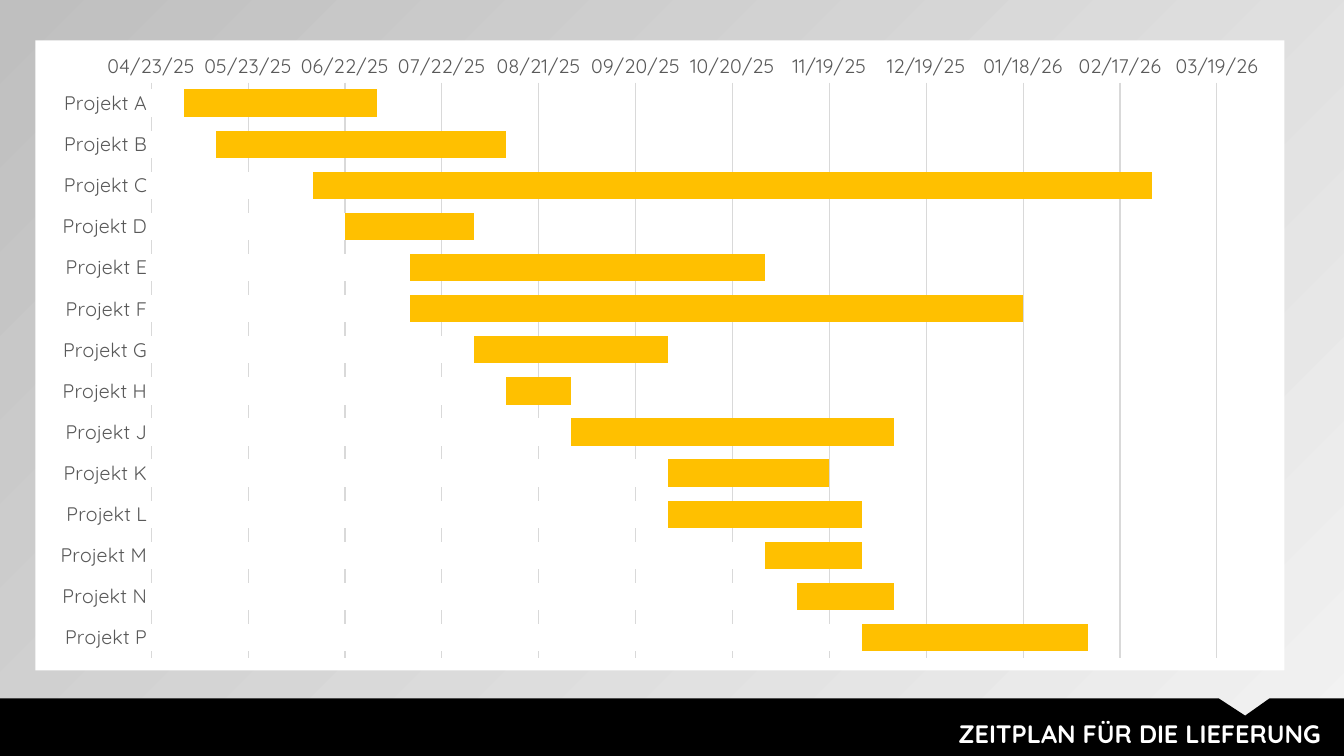
from lxml import etree
from pptx import Presentation
from pptx.chart.data import CategoryChartData
from pptx.dml.color import RGBColor
from pptx.enum.chart import XL_CHART_TYPE as ChartType, XL_TICK_MARK as TickMark
from pptx.enum.text import MSO_ANCHOR, PP_ALIGN
from pptx.oxml import parse_xml
from pptx.oxml.ns import nsdecls, qn
from pptx.util import Inches, Pt

FONT = "Quicksand"
BLACK = RGBColor(0, 0, 0)
WHITE = RGBColor(255, 255, 255)
AMBER = RGBColor(0xFF, 0xC0, 0x00)
LABEL_GREY = RGBColor(0x59, 0x59, 0x59)
LINE_GREY = RGBColor(0xD9, 0xD9, 0xD9)
BACK_LIGHT = RGBColor(0xF2, 0xF2, 0xF2)
BACK_DARK = RGBColor(0xBF, 0xBF, 0xBF)

# Project letter: first and last day as date serial numbers, to the nearest ten
SCHEDULE = {
    "A": (45780, 45840),
    "B": (45790, 45880),
    "C": (45820, 46080),
    "D": (45830, 45870),
    "E": (45850, 45960),
    "F": (45850, 46040),
    "G": (45870, 45930),
    "H": (45880, 45900),
    "J": (45900, 46000),
    "K": (45930, 45980),
    "L": (45930, 45990),
    "M": (45960, 45990),
    "N": (45970, 46000),
    "P": (45990, 46060),
}
AXIS_START, AXIS_END, AXIS_STEP = 45770, 46100, 30
DATE_FORMAT = "mm/dd/yy;@"


def style_font(font, size, color, bold=False):
    font.name = FONT
    font.size = Pt(size)
    font.bold = bold
    font.color.rgb = color


def paint_background(slide):
    fill = slide.background.fill
    fill.gradient()
    fill.gradient_angle = 135
    for stop, color in zip(fill.gradient_stops, (BACK_LIGHT, BACK_DARK)):
        stop.color.rgb = color


def add_footer(slide, left, top, width, height):
    # Black band with a notch in its upper edge
    right, bottom = left + width, top + height
    notch = [(1.24, 0), (0.98, 0.17), (0.74, 0)]
    points = [(right - Inches(x), top + Inches(y)) for x, y in notch]
    points += [(right, top), (right, bottom), (left, bottom)]
    builder = slide.shapes.build_freeform(left, top, scale=1.0)
    builder.add_line_segments(points, close=True)
    band = builder.convert_to_shape()
    band.shadow.inherit = False
    band.fill.solid()
    band.fill.fore_color.rgb = BLACK
    band.line.fill.background()

    # Title at the right end of the band
    box = slide.shapes.add_textbox(
        left + int(0.31 * width), top + int(0.26 * height),
        int(0.68 * width), int(0.7 * height))
    text_frame = box.text_frame
    text_frame.word_wrap = True
    text_frame.vertical_anchor = MSO_ANCHOR.TOP
    text_frame.text = "ZEITPLAN FÜR DIE LIEFERUNG"
    paragraph = text_frame.paragraphs[0]
    paragraph.alignment = PP_ALIGN.RIGHT
    style_font(paragraph.runs[0].font, 18, WHITE, bold=True)


def style_axes(chart):
    category_axis, value_axis = chart.category_axis, chart.value_axis
    for axis in (category_axis, value_axis):
        axis.major_tick_mark = axis.minor_tick_mark = TickMark.NONE
        style_font(axis.tick_labels.font, 14, LABEL_GREY)

    category_axis.reverse_order = True
    value_axis.minimum_scale = AXIS_START
    value_axis.maximum_scale = AXIS_END
    value_axis.major_unit = AXIS_STEP
    value_axis.tick_labels.number_format = DATE_FORMAT
    value_axis.tick_labels.number_format_is_linked = False
    value_axis.format.line.fill.background()
    value_axis.has_major_gridlines = True
    for line in (category_axis.format.line, value_axis.major_gridlines.format.line):
        line.color.rgb = LINE_GREY
        line.width = Pt(0.75)


def set_chart_area(chart, width, height):
    # Fixed plot area, as shares of the chart's size
    plot_area = chart.element.find(".//" + qn("c:plotArea"))
    layout = plot_area.find(qn("c:layout"))
    if layout is None:
        layout = etree.Element(qn("c:layout"))
        plot_area.insert(0, layout)
    manual = etree.SubElement(layout, qn("c:manualLayout"))
    settings = {
        "layoutTarget": "inner", "xMode": "edge", "yMode": "edge",
        "x": Inches(1.15) / width, "y": Inches(0.42) / height,
        "w": Inches(10.57) / width, "h": Inches(5.71) / height,
    }
    for name, value in settings.items():
        etree.SubElement(manual, qn(f"c:{name}")).set("val", str(value))

    # White card behind the chart
    chart.element.find(qn("c:chart")).addnext(parse_xml(
        f'<c:spPr {nsdecls("c", "a")}><a:solidFill><a:srgbClr val="{WHITE}"/></a:solidFill>'
        '<a:ln><a:noFill/></a:ln></c:spPr>'))


def add_gantt_chart(slide, left, top, width, height):
    starts, ends = zip(*SCHEDULE.values())
    data = CategoryChartData(number_format=DATE_FORMAT)
    data.categories = [f"Projekt {letter}" for letter in SCHEDULE]
    data.add_series("Series 1", ends)
    data.add_series("Series 2", starts)
    chart = slide.shapes.add_chart(
        ChartType.BAR_CLUSTERED, left, top, width, height, data).chart
    chart.has_legend = False
    chart.has_title = False
    style_font(chart.font, 14, BLACK)

    # White start bars cover the amber end bars
    plot = chart.plots[0]
    plot.gap_width = 50
    plot.overlap = 100
    plot.vary_by_categories = False
    for series, color in zip(plot.series, (AMBER, WHITE)):
        series.invert_if_negative = False
        series.format.fill.solid()
        series.format.fill.fore_color.rgb = color

    style_axes(chart)
    set_chart_area(chart, width, height)


def main():
    presentation = Presentation()
    presentation.slide_width = Inches(13.33)
    presentation.slide_height = Inches(7.5)
    slide = presentation.slides.add_slide(presentation.slide_layouts[6])
    paint_background(slide)
    add_footer(slide, 0, Inches(6.93), presentation.slide_width, Inches(0.57))
    add_gantt_chart(slide, Inches(0.35), Inches(0.4), Inches(12.39), Inches(6.25))
    presentation.save("out.pptx")


if __name__ == "__main__":
    main()
